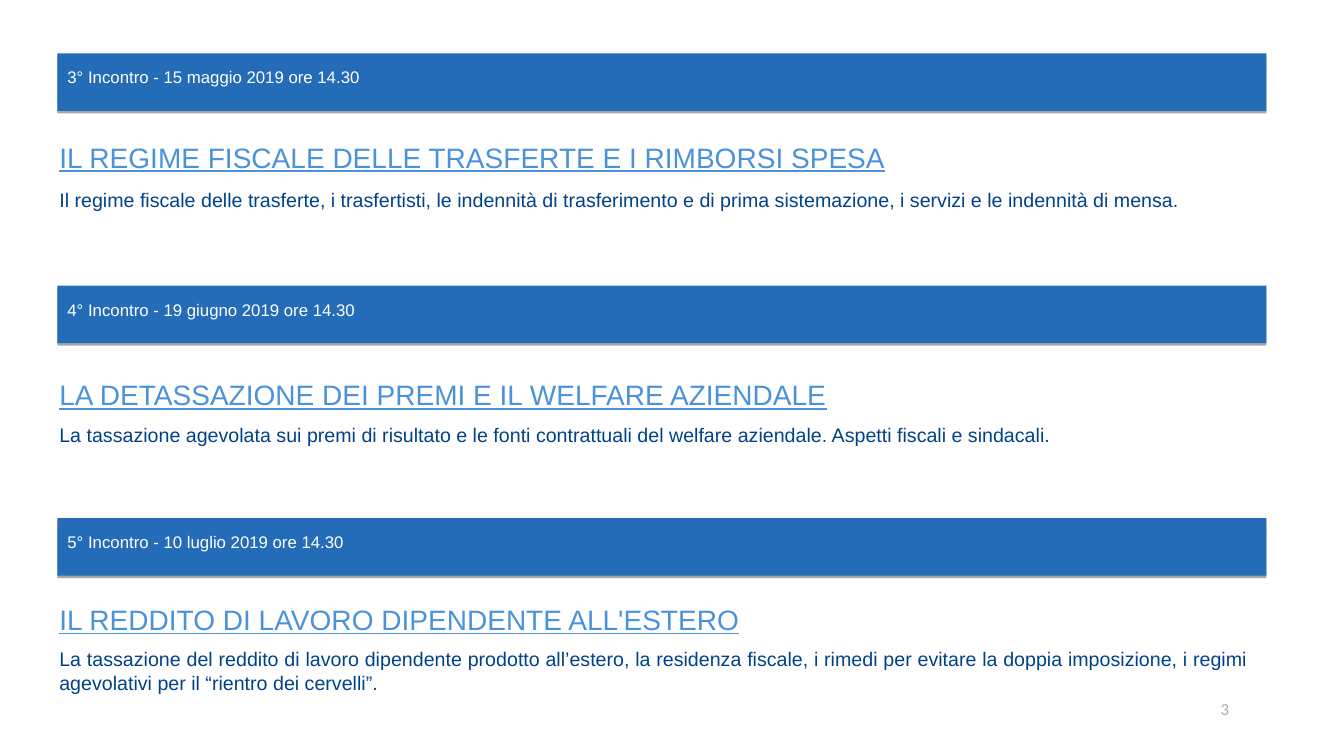
from lxml.etree import SubElement as Sub
from pptx import Presentation
from pptx.dml.color import RGBColor as Rgb
from pptx.enum.shapes import MSO_SHAPE as Shape
from pptx.enum.text import MSO_ANCHOR as Anchor, PP_ALIGN as Align
from pptx.oxml.ns import qn
from pptx.util import Inches, Pt

COLORS = {"bar": "246CB7", "white": "FFFFFF", "title": "4B92DB",
          "body": "004288", "page": "AFABAB", "shade": "000000"}
LEFT, TOP, WIDTH, PITCH, BAR = 0.57, 0.53, 11.99, 2.305, 0.57

# date, title, body, text offset below the bar's top, text height, gap in points
EVENTS = [
    ("3° Incontro - 15 maggio 2019 ore 14.30",
     "IL REGIME FISCALE DELLE TRASFERTE E I RIMBORSI SPESA",
     "Il regime fiscale delle trasferte, i trasfertisti, le indennità di "
     "trasferimento e di prima sistemazione, i servizi e le indennità di mensa.",
     0.59, 1.06, 10.3),
    ("4° Incontro - 19 giugno 2019 ore 14.30",
     "LA DETASSAZIONE DEI PREMI E IL WELFARE AZIENDALE",
     "La tassazione agevolata sui premi di risultato e le fonti contrattuali "
     "del welfare aziendale. Aspetti fiscali e sindacali.",
     0.66, 0.99, 8),
    ("5° Incontro - 10 luglio 2019 ore 14.30",
     "IL REDDITO DI LAVORO DIPENDENTE ALL'ESTERO",
     "La tassazione del reddito di lavoro dipendente prodotto all’estero, la "
     "residenza fiscale, i rimedi per evitare la doppia imposizione, i regimi "
     "agevolativi per il “rientro dei cervelli”.",
     0.58, 1.23, 8),
]


def color(name):
    return Rgb.from_string(COLORS[name])


def write(para, text, size, tint, align, face="Arial"):
    para.alignment = align
    run = para.add_run()
    run.text = text
    run.font.size = Pt(size)
    run.font.name = face
    run.font.color.rgb = color(tint)
    return run


def shade(shape):
    """Give the shape a thin hard shadow below its bottom edge."""
    shape.shadow.inherit = False
    effects = shape._element.spPr.find(qn("a:effectLst"))
    outer = Sub(effects, qn("a:outerShdw"), blurRad="0", dist=str(Pt(1.8)),
                dir="5400000", rotWithShape="0")
    tone = Sub(outer, qn("a:srgbClr"), val=COLORS["shade"])
    Sub(tone, qn("a:alpha"), val="35000")


def add_bar(slide, left, top, width, height, text):
    bar = slide.shapes.add_shape(Shape.RECTANGLE, Inches(left), Inches(top),
                                 Inches(width), Inches(height))
    bar.fill.solid()
    bar.fill.fore_color.rgb = color("bar")
    bar.line.fill.background()
    shade(bar)
    frame = bar.text_frame
    frame.vertical_anchor = Anchor.MIDDLE
    frame.margin_bottom = Inches(0.15)
    write(frame.paragraphs[0], text, 12, "white", Align.LEFT)


def add_text(slide, left, top, width, height):
    box = slide.shapes.add_textbox(Inches(left), Inches(top),
                                   Inches(width), Inches(height))
    box.text_frame.word_wrap = True
    return box.text_frame


def add_event(slide, left, top, width, event):
    date, title, body, drop, height, gap = event
    add_bar(slide, left, top, width, BAR, date)
    frame = add_text(slide, left - 0.08, top + drop, width, height)
    frame.vertical_anchor = Anchor.MIDDLE
    frame.margin_top = Inches(0.24)
    head = write(frame.paragraphs[0], title, 20, "title", Align.JUSTIFY)
    head.font.underline = True
    para = frame.add_paragraph()
    para.space_before = Pt(gap)
    write(para, body, 14, "body", Align.JUSTIFY)


def add_page(slide, left, top, width, height, number):
    frame = add_text(slide, left, top, width, height)
    write(frame.paragraphs[0], number, 12, "page", Align.RIGHT, "Calibri")


def main():
    deck = Presentation()
    deck.slide_width, deck.slide_height = Inches(13.33), Inches(7.5)
    slide = deck.slides.add_slide(deck.slide_layouts[6])
    for row, event in enumerate(EVENTS):
        add_event(slide, LEFT, TOP + row * PITCH, WIDTH, event)
    add_page(slide, 9.42, 6.88, 2.87, 0.47, "3")
    deck.save("out.pptx")


if __name__ == "__main__":
    main()
